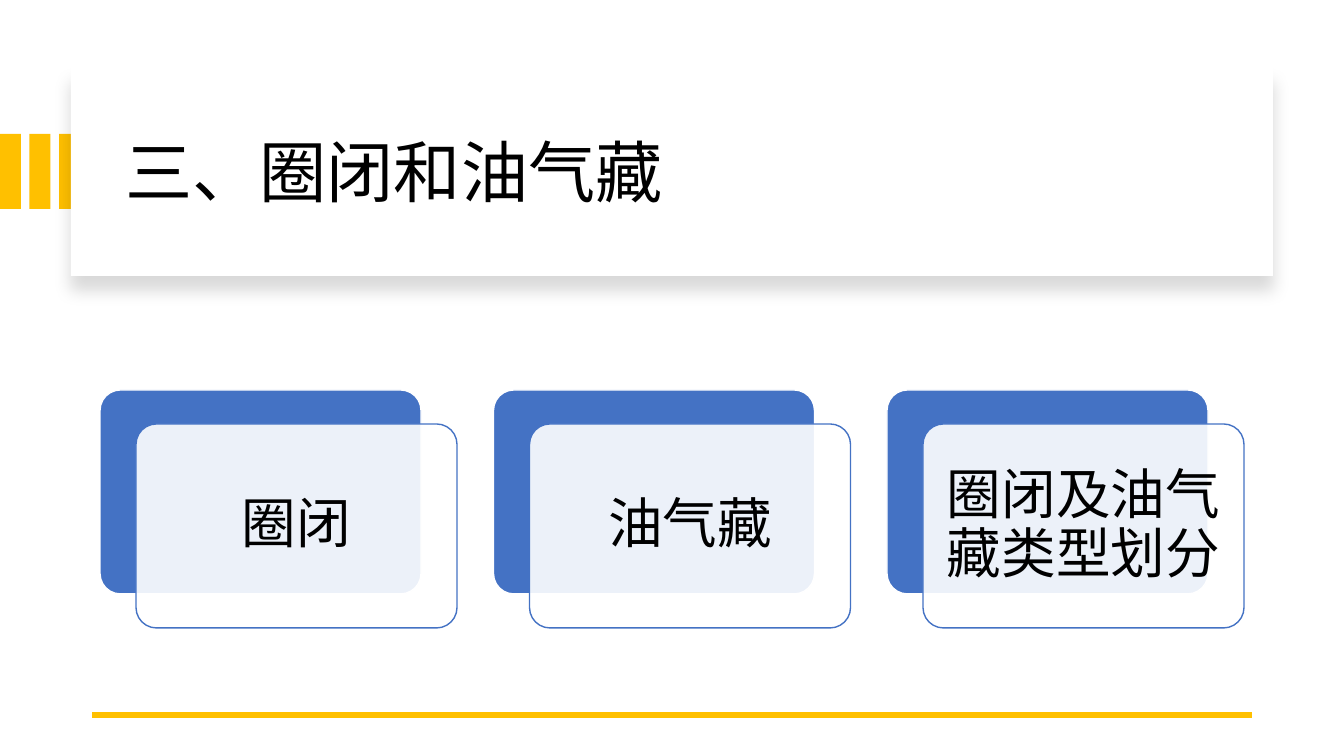
from lxml import etree
from pptx import Presentation
from pptx.dml.color import RGBColor
from pptx.enum.shapes import MSO_CONNECTOR, MSO_SHAPE
from pptx.enum.text import MSO_ANCHOR, MSO_AUTO_SIZE, PP_ALIGN
from pptx.oxml.ns import qn
from pptx.util import Emu, Pt

RECTANGLE, ROUNDED = MSO_SHAPE.RECTANGLE, MSO_SHAPE.ROUNDED_RECTANGLE
STRAIGHT = MSO_CONNECTOR.STRAIGHT
MIDDLE, NO_FIT = MSO_ANCHOR.MIDDLE, MSO_AUTO_SIZE.NONE
LEFT, CENTER = PP_ALIGN.LEFT, PP_ALIGN.CENTER

TITLE = "三、圈闭和油气藏"
TOPICS = ["圈闭", "油气藏", "圈闭及油气藏类型划分"]

THEME = {
    "font": "Noto Sans CJK SC",
    "title_size": 48,
    "card_size": 39,
    "text": "000000",
    "accent": "FFC000",
    "card": "4472C4",
    "paper": "FFFFFF",
}

PAGE_SIZE = (1344, 756)
TITLE_BOX = (115, 90, 1122, 171)
PANEL_BOX = (71, 67, 1202, 209)
RULE = (1252, 715, 92, 715)
STRIPE_COUNT, STRIPE_STEP = 3, 29.5
STRIPE_TOP, STRIPE_WIDTH, STRIPE_HEIGHT = 134, 21, 75
CARD_LEFT, CARD_TOP, CARD_STEP = 100, 390, 393.5
CARD_WIDTH, CARD_HEIGHT = 321, 204
CARD_SHIFT_X, CARD_SHIFT_Y = 36, 34
CARD_INSET = 16


def px(length):
    return Emu(round(length * 914400 / 100.8))


def color(name):
    return RGBColor.from_string(THEME[name])


def add_child(parent, tag, **values):
    return etree.SubElement(parent, qn(tag), {key: str(value) for key, value in values.items()})


def add_box(page, kind, bounds, fill, line=None):
    box = page.shapes.add_shape(kind, *map(px, bounds))
    box.shadow.inherit = False
    box.fill.solid()
    box.fill.fore_color.rgb = color(fill)
    if line:
        box.line.color.rgb = color(line)
        box.line.width = Pt(1)
    else:
        box.line.fill.background()
    if kind == ROUNDED:
        box.adjustments[0] = 0.1
    return box


def write_text(box, text, size, alignment, **frame_format):
    frame = box.text_frame
    settings = {"word_wrap": True, "auto_size": NO_FIT, "vertical_anchor": MIDDLE, **frame_format}
    for name, value in settings.items():
        setattr(frame, name, value)
    para = frame.paragraphs[0]
    para.alignment, para.line_spacing = alignment, 0.9
    span = para.add_run()
    span.text = text
    span.font.name = THEME["font"]
    span.font.size = Pt(THEME[size])
    span.font.color.rgb = color("text")
    add_child(span.font._element, "a:ea", typeface=THEME["font"])


def add_panel(page):
    panel = add_box(page, RECTANGLE, PANEL_BOX, "paper")
    effects = panel.element.spPr.find(qn("a:effectLst"))
    shadow = add_child(effects, "a:outerShdw", blurRad=Pt(11), dist=Pt(10), dir=5400000,
                       algn="t", rotWithShape=0)
    shade = add_child(shadow, "a:srgbClr", val=THEME["text"])
    add_child(shade, "a:alpha", val=15000)
    return panel


def add_rule(page):
    rule = page.shapes.add_connector(STRAIGHT, *map(px, RULE))
    rule.line.color.rgb = color("accent")
    rule.line.width = Pt(4.5)
    add_child(rule.element.spPr, "a:effectLst")


def add_card(page, index, topic):
    left = CARD_LEFT + index * CARD_STEP
    size = (CARD_WIDTH, CARD_HEIGHT)
    add_box(page, ROUNDED, (left, CARD_TOP, *size), "card", "paper")
    front = add_box(page, ROUNDED, (left + CARD_SHIFT_X, CARD_TOP + CARD_SHIFT_Y, *size),
                    "paper", "card")
    tint = front.element.spPr.find(qn("a:solidFill"))[0]
    add_child(tint, "a:alpha", val=90000)
    sides = ("left", "top", "right", "bottom")
    write_text(front, topic, "card_size", CENTER,
               **{f"margin_{side}": px(CARD_INSET) for side in sides})


deck = Presentation()
deck.slide_width, deck.slide_height = map(px, PAGE_SIZE)
page = deck.slides.add_slide(deck.slide_layouts[5])

for index in range(STRIPE_COUNT):
    add_box(page, RECTANGLE,
            (index * STRIPE_STEP, STRIPE_TOP, STRIPE_WIDTH, STRIPE_HEIGHT), "accent")
panel = add_panel(page)

title = page.shapes.title
title.left, title.top, title.width, title.height = map(px, TITLE_BOX)
write_text(title, TITLE, "title_size", LEFT)
panel.element.addnext(title.element)

add_rule(page)
for index, topic in enumerate(TOPICS):
    add_card(page, index, topic)

deck.save("out.pptx")
